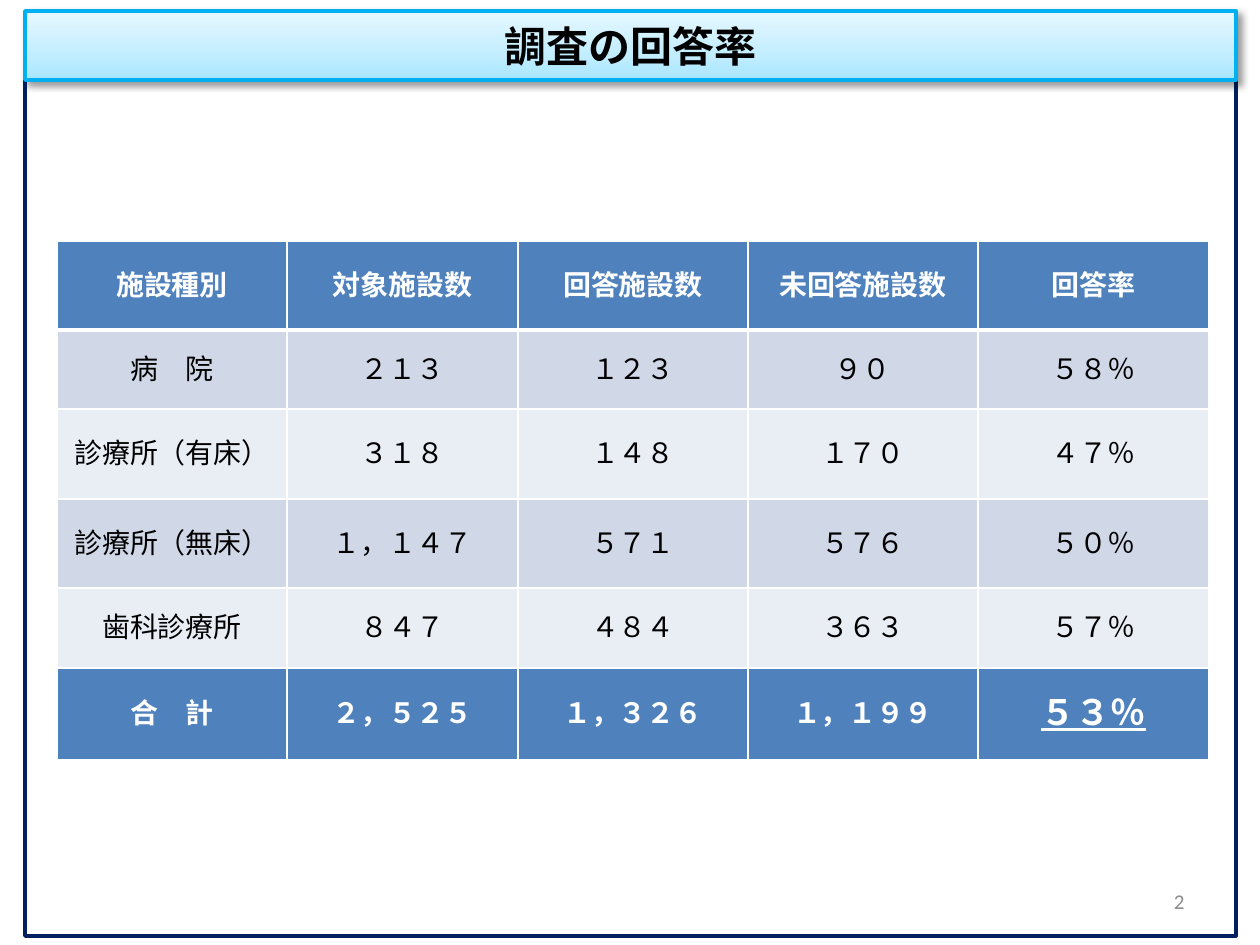
import lxml.etree
import pptx
import pptx.dml.color
import pptx.enum.shapes
import pptx.enum.text
import pptx.oxml
import pptx.oxml.ns
import pptx.util

PX = 914400 / 126
NS = 'xmlns:a="http://schemas.openxmlformats.org/drawingml/2006/main"'
ALIGN = pptx.enum.text.PP_ALIGN
MIDDLE = pptx.enum.text.MSO_ANCHOR.MIDDLE


def color(value):
    return pptx.dml.color.RGBColor.from_string(value)


def write(frame, text, size=16, font="Calibri", fill="000000", bold=False,
          underline=False, align=ALIGN.CENTER):
    paragraph = frame.paragraphs[0]
    paragraph.alignment = align
    run = paragraph.add_run()
    run.text = text
    run.font.size = pptx.util.Pt(size)
    run.font.name = font
    run.font.color.rgb = color(fill)
    run.font.bold = bold
    run.font.underline = underline
    east_asian = lxml.etree.SubElement(run.font._element, pptx.oxml.ns.qn("a:ea"))
    east_asian.set("typeface", font)


deck = pptx.Presentation()
deck.slide_width, deck.slide_height = [pptx.util.Emu(round(n * PX)) for n in (1260, 945)]
slide = deck.slides.add_slide(deck.slide_layouts[5])

heading = slide.shapes.title
heading.left, heading.top, heading.width, heading.height = [
    pptx.util.Emu(round(n * PX)) for n in (25, 11, 1211, 69)]
heading.text_frame.auto_size = pptx.enum.text.MSO_AUTO_SIZE.NONE
heading.text_frame.vertical_anchor = MIDDLE
write(heading.text_frame, "調査の回答率", size=24, font="Noto Sans CJK JP", bold=True)
heading.fill.gradient()
stops = next(heading.element.iter(pptx.oxml.ns.qn("a:gsLst")))
for stop in list(stops):
    stops.remove(stop)
for position, tint in ((0, "A7E6FF"), (35, "C1EDFF"), (100, "E7F8FF")):
    stops.append(pptx.oxml.parse_xml(
        f'<a:gs {NS} pos="{position * 1000}"><a:srgbClr val="{tint}"/></a:gs>'))
heading.fill.gradient_angle = 90
heading.line.color.rgb = color("00B0F0")
heading.line.width = pptx.util.Pt(2)
heading.shadow.inherit = False
effects = next(heading.element.iter(pptx.oxml.ns.qn("a:effectLst")))
effects.append(pptx.oxml.parse_xml(
    f'<a:outerShdw {NS} blurRad="50800" dist="38100" dir="2700000" algn="tl" rotWithShape="0">'
    '<a:srgbClr val="000000"><a:alpha val="40000"/></a:srgbClr></a:outerShdw>'))

page_border = slide.shapes.add_shape(
    pptx.enum.shapes.MSO_SHAPE.RECTANGLE,
    *[pptx.util.Emu(round(n * PX)) for n in (25, 73, 1211, 863)])
page_border.shadow.inherit = False
page_border.fill.solid()
page_border.fill.fore_color.rgb = color("FFFFFF")
page_border.line.color.rgb = color("002060")
page_border.line.width = pptx.util.Pt(2)
heading.element.addprevious(page_border.element)

responses = [
    ("施設種別", "対象施設数", "回答施設数", "未回答施設数", "回答率"),
    ("病　院", "２１３", "１２３", "９０", "５８％"),
    ("診療所（有床）", "３１８", "１４８", "１７０", "４７％"),
    ("診療所（無床）", "１，１４７", "５７１", "５７６", "５０％"),
    ("歯科診療所", "８４７", "４８４", "３６３", "５７％"),
    ("合　計", "２，５２５", "１，３２６", "１，１９９", "５３％"),
]
column_widths = (230, 231, 230, 230, 231)
row_heights = (89, 79, 90, 89, 80, 92)
total_row = len(responses) - 1
response_table = slide.shapes.add_table(
    len(row_heights), len(column_widths),
    *[pptx.util.Emu(round(n * PX))
      for n in (57, 241, sum(column_widths), sum(row_heights))]).table
for column, width in zip(response_table.columns, column_widths):
    column.width = pptx.util.Emu(round(width * PX))
for row, height in zip(response_table.rows, row_heights):
    row.height = pptx.util.Emu(round(height * PX))

for r, values in enumerate(responses):
    strong = r in (0, total_row)
    row_fill = "4F81BD" if strong else ("E9EDF4", "D0D8E8")[r % 2]
    for c, value in enumerate(values):
        overall_rate = r == total_row and c == len(values) - 1
        cell = response_table.cell(r, c)
        cell.vertical_anchor = MIDDLE
        write(cell.text_frame, value, size=20 if overall_rate else 16,
              fill="FFFFFF" if strong else "000000", bold=strong, underline=overall_rate)
        properties = cell._tc.get_or_add_tcPr()
        for edge in ("lnL", "lnR", "lnT", "lnB"):
            under_header = (r, edge) in ((0, "lnB"), (1, "lnT"))
            properties.append(pptx.oxml.parse_xml(
                f'<a:{edge} {NS} w="{38100 if under_header else 12700}"><a:solidFill>'
                f'<a:srgbClr val="FFFFFF"/></a:solidFill></a:{edge}>'))
        cell.fill.solid()
        cell.fill.fore_color.rgb = color(row_fill)

page_number = slide.shapes.add_textbox(
    *[pptx.util.Emu(round(n * PX)) for n in (903, 876, 294, 50)])
page_number.text_frame.word_wrap = True
page_number.text_frame.vertical_anchor = MIDDLE
write(page_number.text_frame, "2", size=12, fill="8C8C8C", align=ALIGN.RIGHT)

deck.save("out.pptx")
